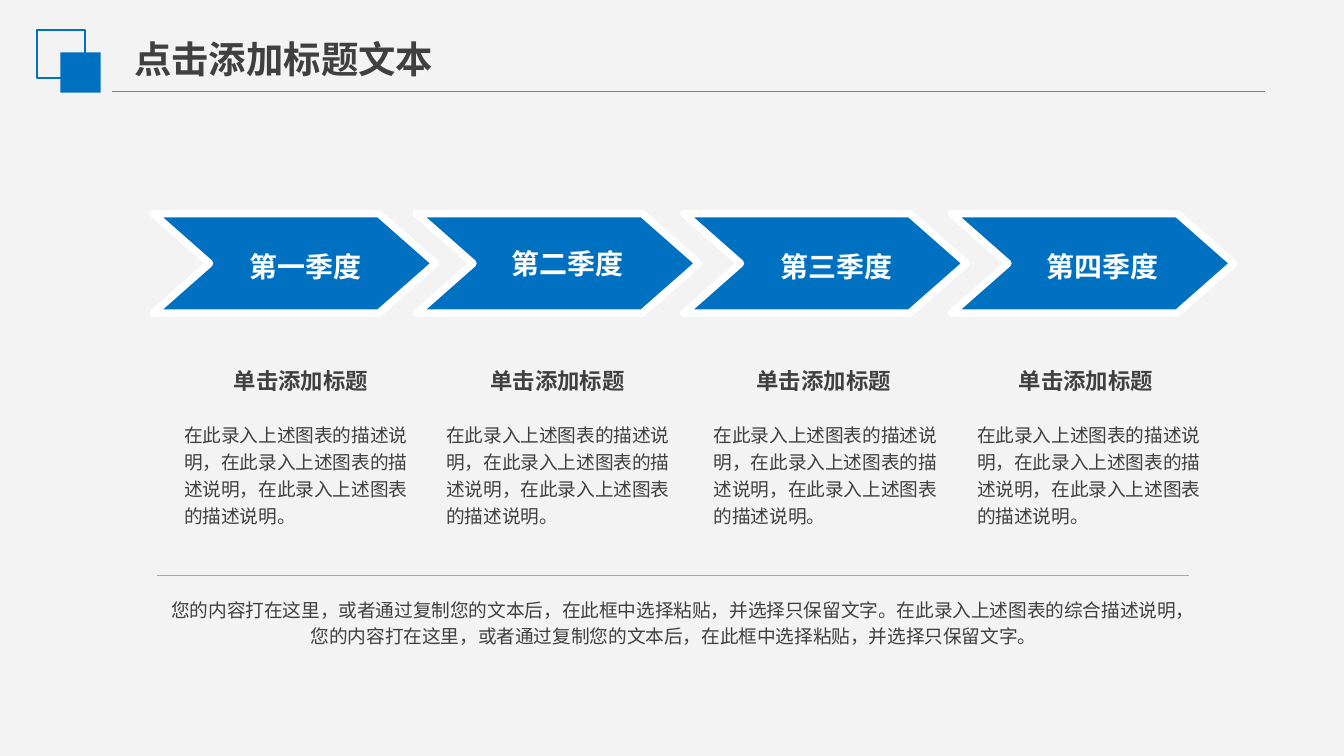
from dataclasses import dataclass
from typing import NamedTuple

from lxml.etree import SubElement
from pptx import Presentation
from pptx.dml.color import RGBColor as Rgb
from pptx.enum.shapes import MSO_CONNECTOR as Link, MSO_SHAPE as Kind
from pptx.enum.text import MSO_ANCHOR as Anchor, MSO_AUTO_SIZE as Fit, PP_ALIGN as Align
from pptx.oxml.ns import qn
from pptx.util import Emu, Inches, Pt


@dataclass(frozen=True)
class Theme:
    back: str = "F3F3F3"
    blue: str = "0070C0"
    white: str = "FFFFFF"
    ink: str = "404040"
    rule: str = "808080"
    pale: str = "A6A6A6"
    sans: str = "Noto Sans CJK SC"
    latin: str = "Arial"
    title: int = 20
    label: int = 15
    head: int = 12
    body: int = 10


class Box(NamedTuple):
    """Left, top, width and height in grid cells."""
    x: float
    y: float
    w: float
    h: float


class Style(NamedTuple):
    size: int
    color: str
    font: str
    bold: bool = False
    align: Align = Align.LEFT
    gap: float = 1.0
    wrap: bool = True
    tight: bool = True
    middle: bool = False


class Quarter(NamedTuple):
    name: str
    arrow: float  # left edge of the chevron
    mid: float    # centre of its label
    head: float   # centre of the heading
    body: float   # left edge of the description
    gap: float = 1.2


# Grid of 100 columns; a cell is a tenth of an inch
COLS, ROWS = 100, 56.25
WIDE = Inches(10)
CELL = WIDE / COLS
T = Theme()

TITLE = Style(T.title, T.ink, T.sans, True, wrap=False, tight=False)
LABEL = Style(T.label, T.white, T.latin, True, Align.CENTER, tight=False, middle=True)
HEAD = Style(T.head, T.ink, T.sans, True, Align.CENTER, wrap=False)
BODY = Style(T.body, T.ink, T.sans, gap=1.2)
NOTE = BODY._replace(align=Align.CENTER)

QUARTERS = [
    Quarter("第一季度", 11.4, 22.75, 22.4, 13),
    Quarter("第二季度", 31, 42.25, 41.5, 32.5, 1.0),
    Quarter("第三季度", 50.9, 62.25, 61.3, 52.4),
    Quarter("第四季度", 70.8, 82.05, 80.8, 72),
]
HINT = "在此录入上述图表的描述说明"
PASTE = "您的内容打在这里，或者通过复制您的文本后，在此框中选择粘贴，并选择只保留文字。"


def cells(n: float) -> Emu:
    return Emu(round(n * CELL))


def place(box: Box) -> list[Emu]:
    return [cells(n) for n in box]


def paint(shape, fill: str | None = None, line: str | None = None, width: float = 1) -> None:
    shape.shadow.inherit = False
    if fill:
        shape.fill.solid()
        shape.fill.fore_color.rgb = Rgb.from_string(fill)
    else:
        shape.fill.background()
    if line:
        shape.line.color.rgb = Rgb.from_string(line)
        shape.line.width = Pt(width)
    else:
        shape.line.fill.background()


def write(slide, box: Box, text: str, style: Style) -> None:
    frame = slide.shapes.add_textbox(*place(box)).text_frame
    frame.word_wrap = style.wrap
    frame.auto_size = Fit.SHAPE_TO_FIT_TEXT
    if style.middle:
        frame.vertical_anchor = Anchor.MIDDLE
    if style.tight:
        frame.margin_left = frame.margin_right = cells(0.7)
        frame.margin_top = frame.margin_bottom = cells(0.4)
    frame.text = text
    para = frame.paragraphs[0]
    para.alignment = style.align
    para.line_spacing = style.gap
    run = para.runs[0]
    font = run.font
    font.size, font.bold, font.name = Pt(style.size), style.bold, style.font
    font.color.rgb = Rgb.from_string(style.color)
    SubElement(run._r.get_or_add_rPr(), qn("a:ea")).set("typeface", T.sans)


def rule(slide, left: float, right: float, y: float, color: str) -> None:
    line = slide.shapes.add_connector(
        Link.STRAIGHT, cells(left), cells(y), cells(right), cells(y))
    line.line.color.rgb = Rgb.from_string(color)
    line.line.width = Pt(0.75)
    SubElement(line._element.spPr, qn("a:effectLst"))


def chevron(slide, box: Box, notch: float) -> None:
    x, y, w, h = box
    path = [(x + w - notch, y), (x + w, y + h / 2), (x + w - notch, y + h),
            (x, y + h), (x + notch, y + h / 2)]
    pen = slide.shapes.build_freeform(cells(x), cells(y))
    pen.add_line_segments([(cells(a), cells(b)) for a, b in path], close=True)
    paint(pen.convert_to_shape(), T.blue, T.white, 4)


def column(slide, item: Quarter) -> None:
    chevron(slide, Box(item.arrow, 15.9, 21, 7.4), 4.2)
    high = 3.8 if item.gap > 1 else 3.5
    write(slide, Box(item.mid - 8.9, 19.6 - high / 2, 17.8, high),
          item.name, LABEL._replace(gap=item.gap))
    write(slide, Box(item.head - 5.8, 26.9, 11.6, 2.8), "单击添加标题", HEAD)
    write(slide, Box(item.body, 30.8, 18.2, 8.8), "，".join([HINT] * 3) + "。", BODY)


def main() -> None:
    deck = Presentation()
    deck.slide_width, deck.slide_height = WIDE, cells(ROWS)
    slide = deck.slides.add_slide(deck.slide_layouts[6])
    slide.background.fill.solid()
    slide.background.fill.fore_color.rgb = Rgb.from_string(T.back)

    # Title bar
    rule(slide, 8.3, 94.1, 6.8, T.rule)
    rect = slide.shapes.add_shape
    paint(rect(Kind.RECTANGLE, *place(Box(2.75, 2.25, 3.55, 3.55))), line=T.blue)
    paint(rect(Kind.RECTANGLE, *place(Box(4.5, 3.9, 3, 3))), fill=T.blue)
    write(slide, Box(9, 2.2, 24.5, 4.4), "点击添加标题文本", TITLE)

    # Quarters
    for item in QUARTERS:
        column(slide, item)

    # Summary
    rule(slide, 11.7, 88.5, 42.8, T.pale)
    write(slide, Box(11.6, 43.8, 77, 4.8),
          PASTE + "在此录入上述图表的综合描述说明，" + PASTE, NOTE)

    deck.save("out.pptx")


if __name__ == "__main__":
    main()
